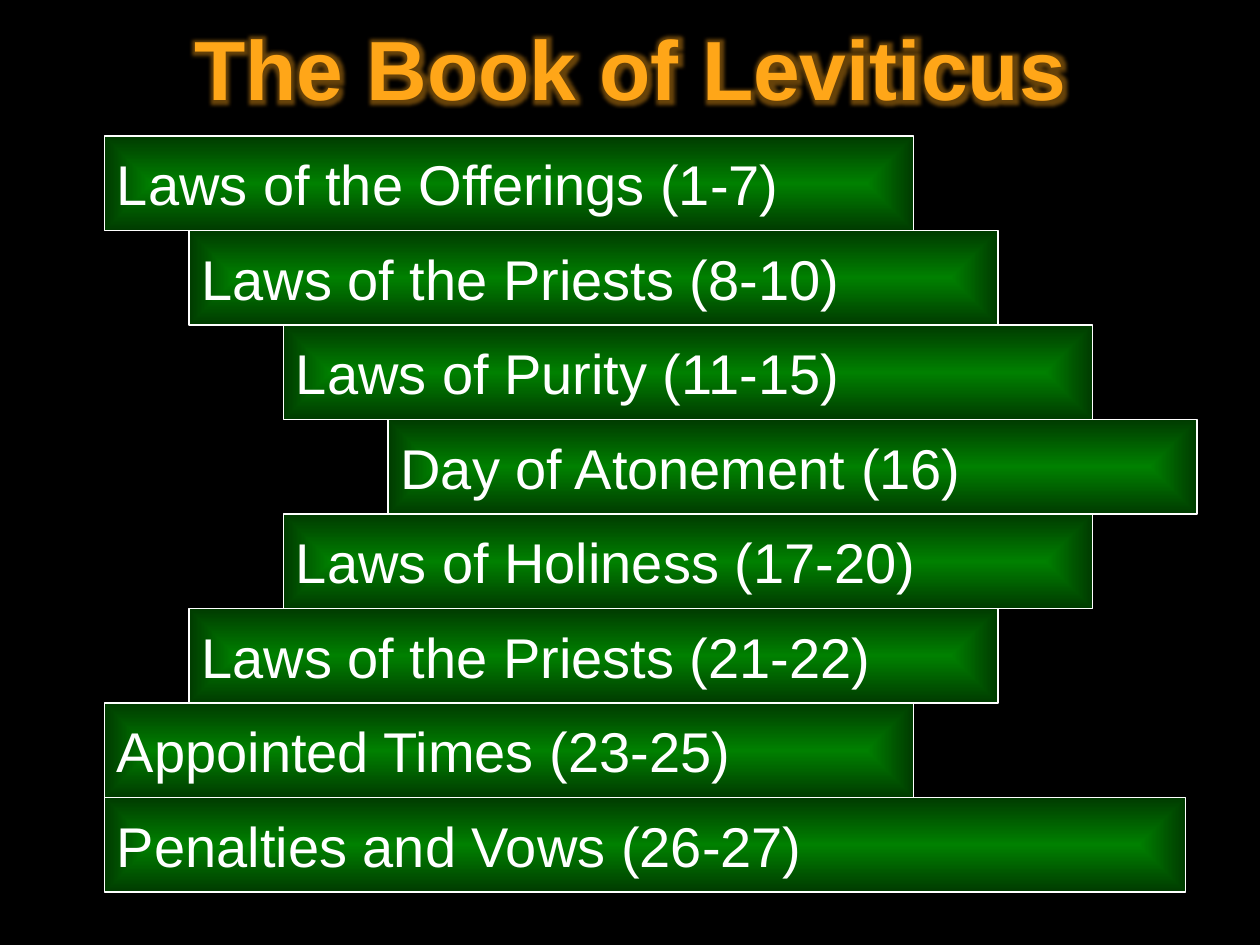
from lxml.etree import SubElement
from pptx import Presentation
from pptx.dml.color import RGBColor
from pptx.enum.shapes import MSO_SHAPE as Shape
from pptx.enum.text import MSO_ANCHOR as Anchor, PP_ALIGN as Align
from pptx.oxml import parse_xml
from pptx.oxml.ns import nsdecls, qn
from pptx.util import Inches, Pt

TITLE = "The Book of Leviticus"
# wording, indent step
LAWS = [
    ("Laws of the Offerings (1-7)", 0),
    ("Laws of the Priests (8-10)", 1),
    ("Laws of Purity (11-15)", 2),
    ("Day of Atonement (16)", 3),
    ("Laws of Holiness (17-20)", 2),
    ("Laws of the Priests (21-22)", 1),
    ("Appointed Times (23-25)", 0),
    ("Penalties and Vows (26-27)", 0),
]
LEFTS = [0.83, 1.5, 2.25, 3.08]
TOP, HIGH, WIDE, LAST = 1.08, 0.75, 6.42, 8.58
GREEN = [(0, "008000"), (100, "003B00")]
GOLD = [(0, "FFD196"), (75, "FFA618"), (100, "C38B00")]
CENTRE = ('<a:path path="shape"><a:fillToRect l="50000" t="50000" '
          'r="50000" b="50000"/></a:path>')
DOWN = '<a:lin ang="5400000" scaled="0"/>'
GLOW = ('<a:effectLst %s><a:glow rad="101600"><a:srgbClr val="FFA618">'
        '<a:alpha val="40000"/></a:srgbClr></a:glow></a:effectLst>')


def rgb(code):
    return RGBColor.from_string(code)


def blend(stops, way):
    """Return a gradient fill element."""
    marks = "".join(f'<a:gs pos="{at * 1000}"><a:srgbClr val="{code}"/></a:gs>'
                    for at, code in stops)
    return parse_xml(f'<a:gradFill {nsdecls("a")} rotWithShape="1">'
                     f'<a:gsLst>{marks}</a:gsLst>{way}</a:gradFill>')


def style(item, **values):
    for name, value in values.items():
        setattr(item, name, value)


def write(shape, words, size, bold, align, **frame):
    style(shape.text_frame, vertical_anchor=Anchor.MIDDLE, **frame)
    para = shape.text_frame.paragraphs[0]
    para.alignment = align
    run = para.add_run()
    run.text = words
    style(run.font, name="Arial", size=Pt(size), bold=bold)
    return para, run.font


def add_bar(slide, words, left, top, wide):
    bar = slide.shapes.add_shape(Shape.RECTANGLE, Inches(left), Inches(top),
                                 Inches(wide), Inches(HIGH))
    bar.shadow.inherit = False
    bar.line.color.rgb = rgb("FFFFFF")
    bar.line.width = Pt(0.75)
    bar._element.spPr.find(qn("a:prstGeom")).addnext(blend(GREEN, CENTRE))
    para, font = write(bar, words, 32, False, Align.LEFT, word_wrap=True)
    para.space_before = Pt(6.4)
    font.color.rgb = rgb("FFFFFF")


def add_title(slide):
    title = slide.shapes.title
    style(title, left=Inches(1.4), top=Inches(0.08),
          width=Inches(7.21), height=Inches(0.91))
    para, font = write(title, TITLE, 48, True, Align.CENTER, word_wrap=False)
    props = para.runs[0]._r.get_or_add_rPr()
    props.insert(0, blend(GOLD, DOWN))
    props.insert(1, parse_xml(GLOW % nsdecls("a")))


def main():
    deck = Presentation()
    style(deck, slide_width=Inches(10), slide_height=Inches(7.5))
    slide = deck.slides.add_slide(deck.slide_layouts[5])
    back = slide.background.fill
    back.solid()
    back.fore_color.rgb = rgb("000000")
    add_title(slide)
    for row, (words, step) in enumerate(LAWS):
        wide = LAST if row == len(LAWS) - 1 else WIDE
        add_bar(slide, words, LEFTS[step], TOP + row * HIGH, wide)
    deck.save("out.pptx")


if __name__ == "__main__":
    main()
